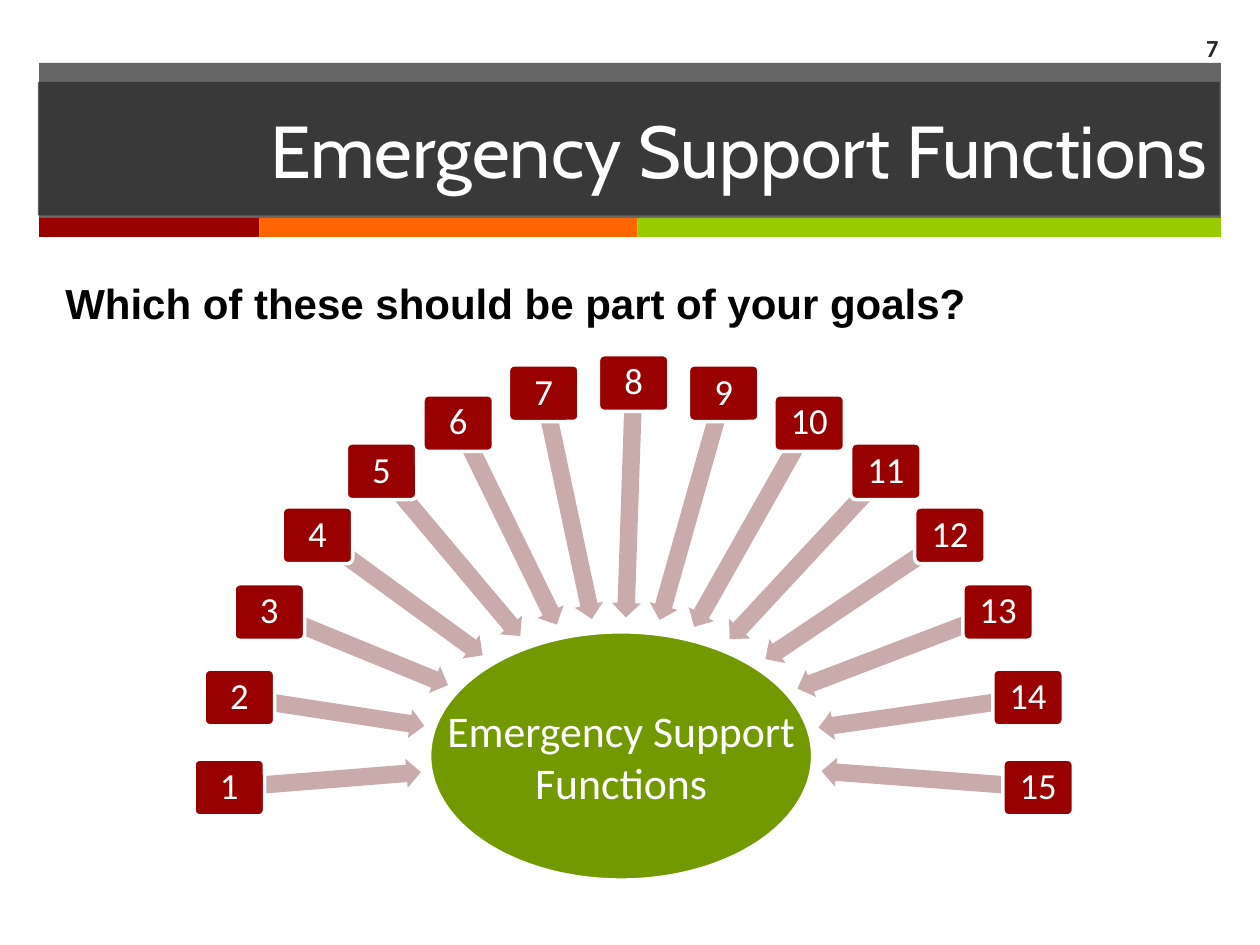
import math

from lxml import etree
from pptx import Presentation
from pptx.dml.color import RGBColor
from pptx.enum.shapes import MSO_SHAPE
from pptx.enum.text import MSO_ANCHOR, MSO_AUTO_SIZE, PP_ALIGN
from pptx.oxml.ns import qn
from pptx.util import Inches, Pt

RECTANGLE = MSO_SHAPE.RECTANGLE
ROUNDED = MSO_SHAPE.ROUNDED_RECTANGLE
ELLIPSE = MSO_SHAPE.OVAL
LEFT_ARROW = MSO_SHAPE.LEFT_ARROW
LEFT, CENTER, RIGHT = PP_ALIGN.LEFT, PP_ALIGN.CENTER, PP_ALIGN.RIGHT
TOP, MIDDLE = MSO_ANCHOR.TOP, MSO_ANCHOR.MIDDLE

WHITE = RGBColor(0xFF, 0xFF, 0xFF)
BLACK = RGBColor(0x00, 0x00, 0x00)
CHARCOAL = RGBColor(0x26, 0x26, 0x26)
RED = RGBColor(0x99, 0x00, 0x00)
ORANGE = RGBColor(0xFF, 0x66, 0x00)
LIME = RGBColor(0x99, 0xCC, 0x00)
GREEN = RGBColor(0x73, 0x99, 0x00)
PINK = RGBColor(0xCA, 0xAB, 0xAB)

FUNCTION_COUNT = 15
FAN_X, FAN_Y, FAN_RADIUS = 5.03, 6.25, 3.21
BOX_WIDTH, BOX_HEIGHT = 0.56, 0.45
HUB_X, HUB_Y, HUB_WIDTH, HUB_HEIGHT = 4.93, 6, 3.04, 1.97
# Arrow tips lie on an ellipse slightly larger than the hub.
TIP_RADIUS_X, TIP_RADIUS_Y = 1.6, 1.1
ARROW_THICKNESS = 0.23


def write_text(shape, text, *, size, color, font="Calibri", bold=False,
               align=CENTER, anchor=MIDDLE, inset=None, spacing=None):
    frame = shape.text_frame
    frame.word_wrap = True
    frame.auto_size = MSO_AUTO_SIZE.NONE
    frame.vertical_anchor = anchor
    if inset is not None:
        frame.margin_left = frame.margin_right = Inches(inset)
        frame.margin_top = frame.margin_bottom = Inches(inset)
    paragraph = frame.paragraphs[0]
    paragraph.alignment = align
    if spacing:
        paragraph.line_spacing = spacing
    run = paragraph.add_run()
    run.text = text
    run.font.name = font
    run.font.size = Pt(size)
    run.font.bold = bold
    run.font.color.rgb = color


def fill_solid(shape, color, opacity=100):
    shape.fill.solid()
    shape.fill.fore_color.rgb = color
    if opacity < 100:
        color_element = shape.fill._xPr.find(".//" + qn("a:srgbClr"))
        etree.SubElement(color_element, qn("a:alpha"), val=str(opacity * 1000))


def place(shape, left, top, width, height):
    shape.left, shape.top = Inches(left), Inches(top)
    shape.width, shape.height = Inches(width), Inches(height)


class SlideBuilder:
    def __init__(self, slide):
        self.slide = slide

    def title(self, text, left, top, width, height):
        title = self.slide.shapes.title
        place(title, left, top, width, height)
        fill_solid(title, CHARCOAL, opacity=70)
        write_text(title, text, size=42, color=WHITE, font="Cabin", align=RIGHT)

    def shape(self, kind, left, top, width, height, color, *,
              opacity=100, outline=None, adjustments=()):
        shape = self.slide.shapes.add_shape(
            kind, Inches(left), Inches(top), Inches(width), Inches(height))
        shape.shadow.inherit = False
        fill_solid(shape, color, opacity)
        if outline is None:
            shape.line.fill.background()
        else:
            shape.line.color.rgb = outline
            shape.line.width = Pt(2)
        for index, value in enumerate(adjustments):
            shape.adjustments[index] = value
        return shape

    def text(self, text, left, top, width, height, **text_format):
        box = self.slide.shapes.add_textbox(
            Inches(left), Inches(top), Inches(width), Inches(height))
        write_text(box, text, **text_format)

    def arrow_to_hub(self, x, y):
        """Point a block arrow from (x, y) toward the centre of the hub."""
        angle = math.atan2(HUB_Y - y, HUB_X - x)
        tip_distance = 1 / math.hypot(math.cos(angle) / TIP_RADIUS_X,
                                      math.sin(angle) / TIP_RADIUS_Y)
        length = math.hypot(HUB_X - x, HUB_Y - y) - tip_distance
        middle_x = x + length / 2 * math.cos(angle)
        middle_y = y + length / 2 * math.sin(angle)
        arrow = self.shape(
            LEFT_ARROW, middle_x - length / 2, middle_y - ARROW_THICKNESS / 2,
            length, ARROW_THICKNESS, PINK, adjustments=(0.6, 0.5))
        arrow.rotation = math.degrees(angle) + 180

    def numbered_box(self, number, x, y):
        box = self.shape(ROUNDED, x - BOX_WIDTH / 2, y - BOX_HEIGHT / 2,
                         BOX_WIDTH, BOX_HEIGHT, RED,
                         outline=WHITE, adjustments=(0.1,))
        write_text(box, str(number), size=21, color=WHITE, inset=0.04, spacing=0.9)


def main():
    presentation = Presentation()
    presentation.slide_width, presentation.slide_height = Inches(10), Inches(7.5)
    slide = presentation.slides.add_slide(presentation.slide_layouts[5])
    builder = SlideBuilder(slide)

    builder.shape(RECTANGLE, 0.31, 0.5, 9.38, 1.24, CHARCOAL, opacity=70)
    stripe_left = 0.31
    for width, color in ((1.75, RED), (3, ORANGE), (4.63, LIME)):
        builder.shape(RECTANGLE, stripe_left, 1.73, width, 0.15, color)
        stripe_left += width
    # The title belongs in front of the header band.
    slide.shapes._spTree.append(slide.shapes.title._element)
    builder.title("Emergency Support Functions", 0.3, 0.65, 9.38, 1.06)

    hub_area = (HUB_X - HUB_WIDTH / 2, HUB_Y - HUB_HEIGHT / 2, HUB_WIDTH, HUB_HEIGHT)
    builder.shape(ELLIPSE, *hub_area, GREEN, outline=WHITE)
    builder.text("Emergency Support Functions", *hub_area,
                 size=25, color=WHITE, inset=0.02)

    for index in range(FUNCTION_COUNT):
        angle = math.pi * (1 - index / (FUNCTION_COUNT - 1))
        x = FAN_X + FAN_RADIUS * math.cos(angle)
        y = FAN_Y - FAN_RADIUS * math.sin(angle)
        builder.arrow_to_hub(x, y)
        builder.numbered_box(index + 1, x, y)

    builder.text("7", 9.08, 0.18, 0.69, 0.39,
                 size=14, color=CHARCOAL, bold=True, align=RIGHT)
    builder.text("Which of these should be part of your goals?", 0.42, 2.15, 9.06, 0.5,
                 size=24, color=BLACK, font="Arial", bold=True, align=LEFT, anchor=TOP)

    presentation.save("out.pptx")


if __name__ == "__main__":
    main()
